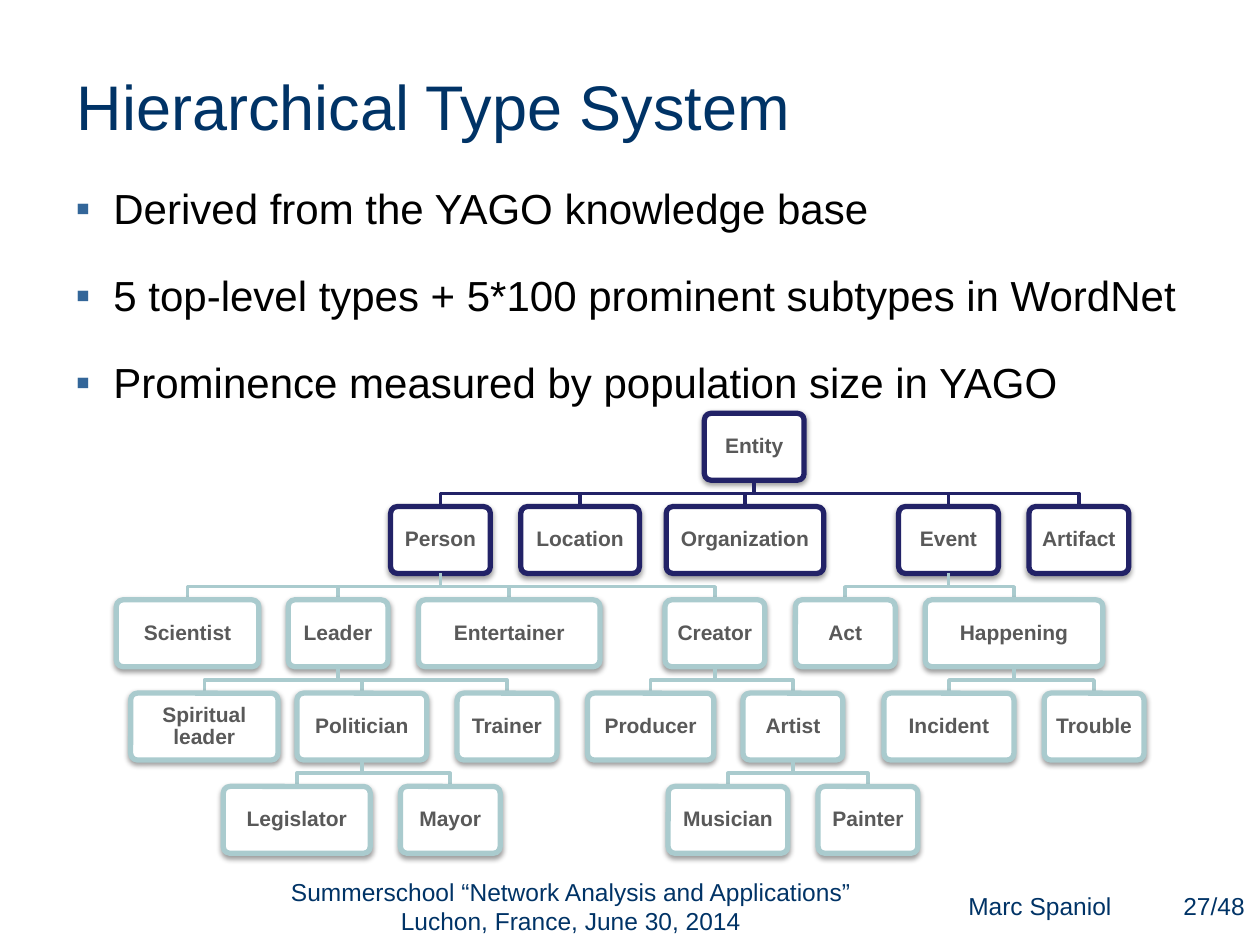
from lxml import etree
from pptx import Presentation
from pptx.dml.color import RGBColor
from pptx.enum.shapes import MSO_SHAPE
from pptx.enum.text import MSO_ANCHOR, MSO_AUTO_SIZE, PP_ALIGN
from pptx.oxml import parse_xml
from pptx.oxml.ns import nsdecls, qn
from pptx.util import Pt

ROUND = MSO_SHAPE.ROUNDED_RECTANGLE
MIDDLE, TOP = MSO_ANCHOR.MIDDLE, MSO_ANCHOR.TOP
LEFT, CENTER = PP_ALIGN.LEFT, PP_ALIGN.CENTER
FIXED = MSO_AUTO_SIZE.NONE

NAVY, PALE, BLUE, GREY = "222267", "AACBCE", "003366", "595959"
TREE_TOP, BOX_H, PITCH, BOX_W = 236.2, 38.2, 53.3, 57

POINTS = [
    "Derived from the YAGO knowledge base",
    "5 top-level types + 5*100 prominent subtypes in WordNet",
    "Prominence measured by population size in YAGO",
]


def node(name, left, *kids, width=BOX_W):
    return {"name": name, "left": left, "width": width, "kids": kids}


TREE = node(
    "Entity", 402.5,
    node("Person", 223.2,
         node("Scientist", 66.5, width=81.4),
         node("Leader", 164.7,
              node("Spiritual leader", 74.7, width=84.2),
              node("Politician", 169.7,
                   node("Legislator", 127.6, width=84),
                   node("Mayor", 228.8),
                   width=74.2),
              node("Trainer", 261.2)),
         node("Entertainer", 239.2, width=103.7),
         node("Creator", 380,
              node("Producer", 335.7, width=72.2),
              node("Artist", 424.6,
                   node("Musician", 381.8, width=68.4),
                   node("Painter", 467.5)))),
    node("Location", 297.6, width=67.8),
    node("Organization", 380.7, width=90),
    node("Event", 513.5,
         node("Act", 454.5),
         node("Happening", 528.7,
              node("Incident", 505.2, width=74.2),
              node("Trouble", 596.7),
              width=101.5)),
    node("Artifact", 588),
)


def color(value):
    return RGBColor.from_string(value)


def place(shape, left, top, width, height):
    shape.left, shape.top = Pt(left), Pt(top)
    shape.width, shape.height = Pt(width), Pt(height)


def bullet(para, mark, tint):
    props = para._p.get_or_add_pPr()
    props.set("marL", str(Pt(21.6)))
    props.set("indent", str(-Pt(21.6)))
    tone = etree.SubElement(props, qn("a:buClr"))
    etree.SubElement(tone, qn("a:srgbClr"), val=tint)
    etree.SubElement(props, qn("a:buFont"), typeface="Arial")
    etree.SubElement(props, qn("a:buChar"), char=mark)


def write(shape, *lines, size=14, tint=BLUE, bold=False, align=CENTER,
          anchor=MIDDLE, pads=(7.2, 3.6, 7.2, 3.6), space=1, gap=0, mark=None):
    """Fill a shape with one paragraph per line; pads run left, top, right, bottom."""
    frame = shape.text_frame
    frame.word_wrap = True
    frame.auto_size = FIXED
    frame.vertical_anchor = anchor
    (frame.margin_left, frame.margin_top,
     frame.margin_right, frame.margin_bottom) = map(Pt, pads)
    for i, line in enumerate(lines):
        para = frame.add_paragraph() if i else frame.paragraphs[0]
        if mark:
            bullet(para, mark, "336699")
        para.alignment = align
        para.line_spacing = space
        para.space_before = Pt(gap if i else 0)
        run = para.add_run()
        run.text = line
        run.font.name, run.font.size, run.font.bold = "Arial", Pt(size), bold
        run.font.color.rgb = color(tint)


def label(slide, text, left, top, width, height, **form):
    box = slide.shapes.add_textbox(Pt(left), Pt(top), Pt(width), Pt(height))
    write(box, text, **form)


def shade(shape):
    shape.shadow.inherit = False
    effects = shape._element.spPr.find(qn("a:effectLst"))
    effects.append(parse_xml(
        f'<a:outerShdw {nsdecls("a")} blurRad="{Pt(3.1)}" dist="{Pt(1.6)}" '
        'dir="5400000" rotWithShape="0"><a:srgbClr val="000000">'
        '<a:alpha val="38000"/></a:srgbClr></a:outerShdw>'))


def level(depth):
    return TREE_TOP + depth * PITCH


def tone(depth):
    return NAVY if depth < 2 else PALE


def middle(item):
    return item["left"] + item["width"] / 2


def draw_box(slide, item, depth):
    box = slide.shapes.add_shape(ROUND, Pt(item["left"]), Pt(level(depth)),
                                 Pt(item["width"]), Pt(BOX_H))
    box.adjustments[0] = 0.1
    box.fill.solid()
    box.fill.fore_color.rgb = color("FFFFFF")
    box.line.color.rgb = color(tone(depth))
    box.line.width = Pt(3)
    shade(box)
    write(box, item["name"], size=12, tint=GREY, bold=True, space=0.9,
          pads=(4.7,) * 4)


def draw_link(slide, item, kid, depth):
    """Join a box to a child at the given depth by an elbow."""
    start, end = level(depth - 1) + BOX_H, level(depth)
    bend = (start + end) / 2
    a, b = middle(item), middle(kid)
    path = slide.shapes.build_freeform(Pt(a), Pt(start))
    path.add_line_segments(
        [(Pt(x), Pt(y)) for x, y in ((a, bend), (b, bend), (b, end))],
        close=False)
    link = path.convert_to_shape()
    link.fill.background()
    link.line.color.rgb = color(tone(depth))
    link.line.width = Pt(2)
    link.shadow.inherit = False


def draw_tree(slide, item, depth=0):
    draw_box(slide, item, depth)
    for kid in item["kids"]:
        draw_link(slide, item, kid, depth + 1)
        draw_tree(slide, kid, depth + 1)


def main():
    deck = Presentation()
    deck.slide_width, deck.slide_height = Pt(720), Pt(540)
    slide = deck.slides.add_slide(deck.slide_layouts[1])
    title, body = slide.placeholders
    place(title, 36.7, 37.4, 504.7, 45.4)
    write(title, "Hierarchical Type System", size=36, align=LEFT)
    place(body, 36, 82.8, 648, 399.6)
    write(body, *POINTS, size=24, tint="000000", align=LEFT, anchor=TOP,
          pads=(7.2, 7, 7.2, 3.6), space=1.5, gap=6.6, mark="▪")
    draw_tree(slide, TREE)
    label(slide, "Summerschool “Network Analysis and Applications” "
          "Luchon, France, June 30, 2014", 150.5, 499, 351.4, 37.4)
    label(slide, "Marc Spaniol", 534.2, 499, 120.2, 37.4)
    label(slide, "27/48", 672.5, 500.4, 43.9, 34.6, pads=(2.2, 3.6, 3.6, 3.6))
    deck.save("out.pptx")


if __name__ == "__main__":
    main()
